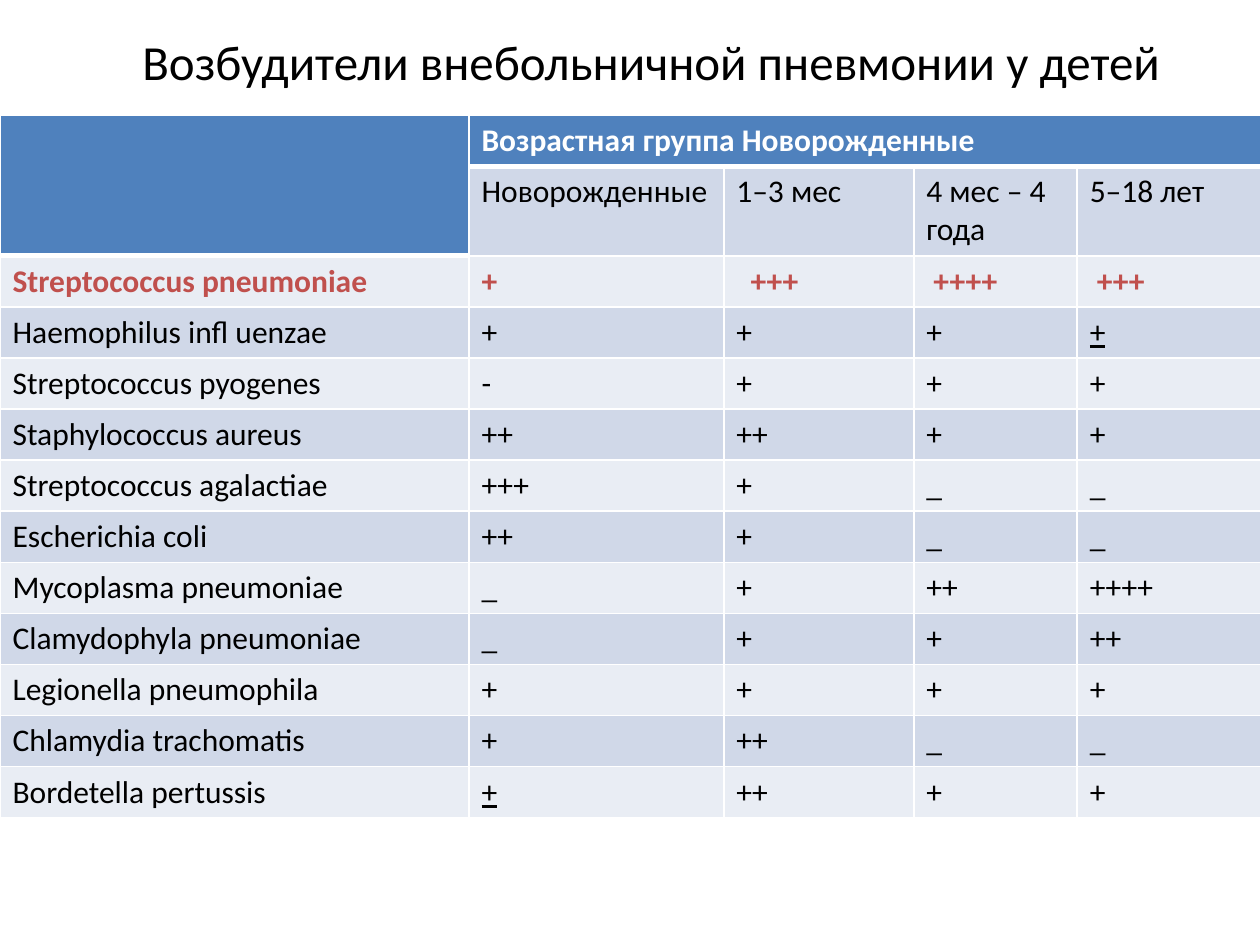
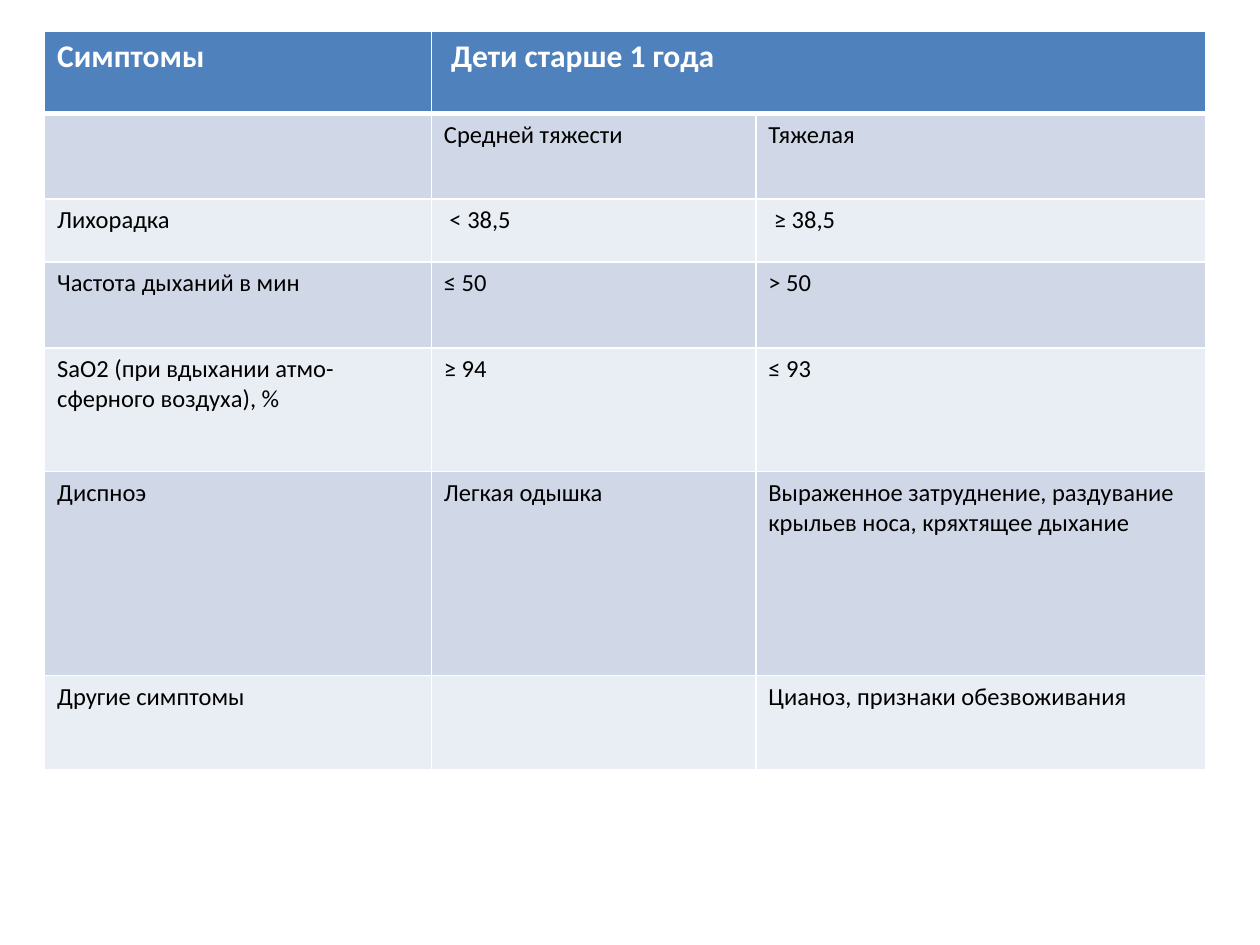
from lxml.etree import SubElement
from pptx import Presentation
from pptx.dml.color import RGBColor
from pptx.enum.text import MSO_ANCHOR, PP_ALIGN
from pptx.oxml.ns import qn
from pptx.util import Pt

FONT = "Calibri"
HEADER, BAND_DARK, BAND_LIGHT = "4F81BD", "D0D8E8", "E9EDF4"
WHITE, BLACK, ACCENT = "FFFFFF", "000000", "C0504D"


def add_run(p, text, size, color, bold=False, underline=False):
    r = p.add_run()
    r.text = text
    r.font.name, r.font.size = FONT, Pt(size)
    r.font.bold, r.font.underline = bold, underline
    r.font.color.rgb = RGBColor.from_string(color)


def add_banded_table(s, left, top, widths, heights, rows, body_size,
                     merges, header_cells, accent_row=None, underlined=()):
    tbl = s.shapes.add_table(len(heights), len(widths), Pt(left), Pt(top),
                             Pt(sum(widths)), Pt(sum(heights))).table
    for column, width in zip(tbl.columns, widths):
        column.width = Pt(width)
    for row, height in zip(tbl.rows, heights):
        row.height = Pt(height)
    for first, last in merges:
        tbl.cell(*first).merge(tbl.cell(*last))

    for i, texts in enumerate(rows):
        for j, text in enumerate(texts):
            cell = tbl.cell(i, j)
            is_header = (i, j) in header_cells
            # White grid, thicker under the header
            widths_by_side = {"L": 1, "R": 1,
                              "T": 3 if (i - 1, j) in header_cells else 1,
                              "B": 3 if is_header else 1}
            tcPr = cell._tc.get_or_add_tcPr()
            for side, width in widths_by_side.items():
                ln = SubElement(tcPr, qn(f"a:ln{side}"), w=str(Pt(width)))
                SubElement(SubElement(ln, qn("a:solidFill")),
                           qn("a:srgbClr"), val=WHITE)
            # Band fill
            fill = HEADER if is_header else BAND_DARK if i % 2 else BAND_LIGHT
            cell.fill.solid()
            cell.fill.fore_color.rgb = RGBColor.from_string(fill)
            # Cell text
            if text:
                accent = i == accent_row
                color = WHITE if is_header else ACCENT if accent else BLACK
                add_run(cell.text_frame.paragraphs[0], text,
                        18 if is_header else body_size, color,
                        is_header or accent, (i, j) in underlined)
    return tbl


prs = Presentation()
prs.slide_width, prs.slide_height = Pt(720), Pt(540)

# Slide 1: pathogens by age group
s = prs.slides.add_slide(prs.slide_layouts[5])
title = s.shapes.title
title.left, title.top, title.width, title.height = Pt(48), Pt(15), Pt(648), Pt(40)
tf = title.text_frame
tf.vertical_anchor = MSO_ANCHOR.MIDDLE
p = tf.paragraphs[0]
p.alignment = PP_ALIGN.CENTER
add_run(p, "Возбудители внебольничной пневмонии у детей", 28, BLACK)

pathogens = [
    ("", "Возрастная группа Новорожденные", "", "", ""),
    ("", "Новорожденные", "1–3 мес", "4 мес – 4 года", "5–18 лет"),
    ("Streptococcus pneumoniae", "+", " +++", " ++++", " +++"),
    ("Haemophilus infl uenzae", "+", "+", "+", "+"),
    ("Streptococcus pyogenes", "-", "+", "+", "+"),
    ("Staphylococcus aureus", "++", "++", "+", "+"),
    ("Streptococcus agalactiae", "+++", "+", "_", "_"),
    ("Escherichia coli", "++", "+", "_", "_"),
    ("Mycoplasma pneumoniae", "_", "+", "++", "++++"),
    ("Clamydophyla pneumoniae", "_", "+", "+", "++"),
    ("Legionella pneumophila", "+", "+", "+", "+"),
    ("Chlamydia trachomatis", "+", "++", "_", "_"),
    ("Bordetella pertussis", "+", "++", "+", "+"),
]
tbl = add_banded_table(
    s, 0, 65.8, [268, 145.6, 108.6, 93.4, 105], [28.8, 50.6] + [29.2] * 11,
    pathogens, 18, merges=[((0, 0), (1, 0)), ((0, 1), (0, 4))],
    header_cells={(0, j) for j in range(5)} | {(1, 0)},
    accent_row=2, underlined={(3, 4), (12, 1)})
tbl.cell(2, 2).margin_left = Pt(11.3)

# Slide 2: symptoms by severity
s = prs.slides.add_slide(prs.slide_layouts[6])
symptoms = [
    ("Симптомы", " Дети старше 1 года", ""),
    ("", "Средней тяжести", "Тяжелая"),
    ("Лихорадка", " < 38,5", " ≥ 38,5"),
    ("Частота дыханий в мин", "≤ 50", "> 50"),
    ("SaO2 (при вдыхании атмо- сферного воздуха), %", "≥ 94", "≤ 93"),
    ("Диспноэ", "Легкая одышка",
     "Выраженное затруднение, раздувание крыльев носа, кряхтящее дыхание"),
    ("Другие симптомы", "", "Цианоз, признаки обезвоживания"),
]
add_banded_table(
    s, 25.5, 18, [221, 185.4, 257], [46.8, 49, 36, 49, 70.8, 116.6, 53.6],
    symptoms, 14, merges=[((0, 1), (0, 2))],
    header_cells={(0, j) for j in range(3)})

prs.save("out.pptx")
